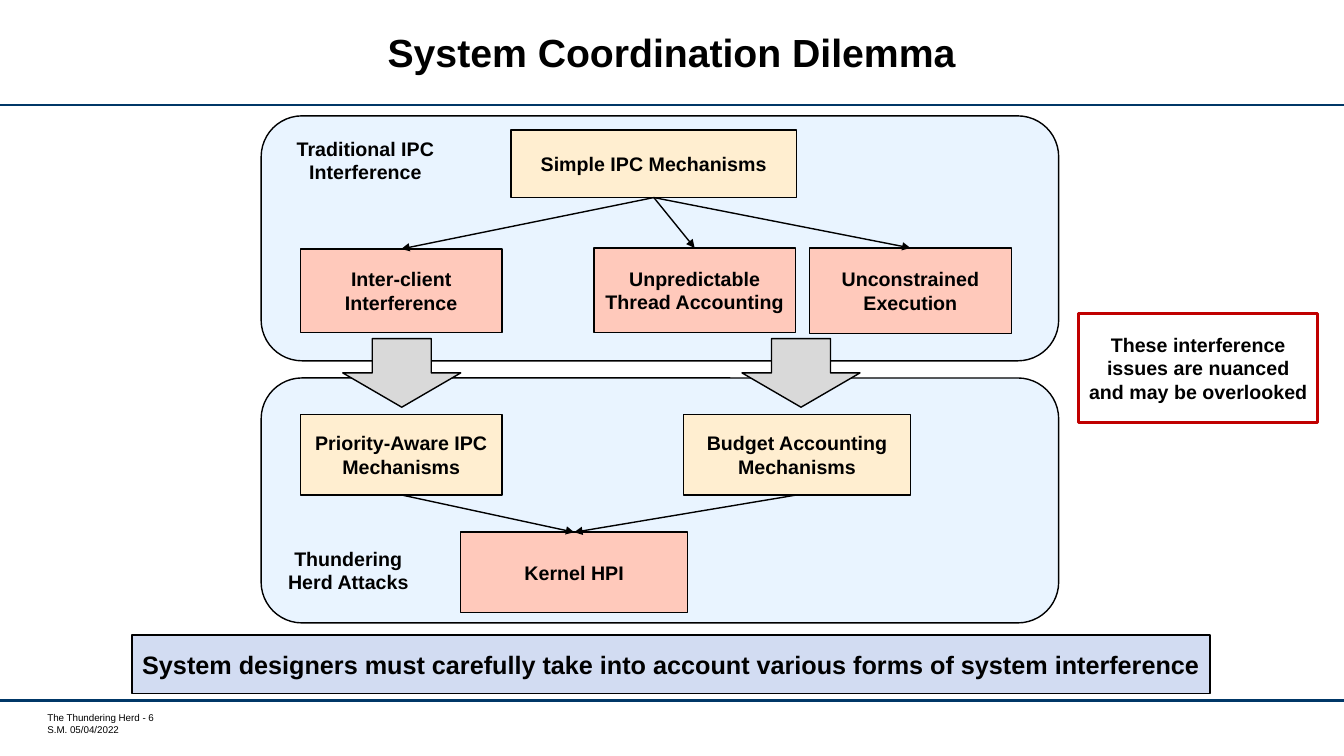
from dataclasses import dataclass

from lxml.etree import SubElement
from pptx import Presentation
from pptx.dml.color import RGBColor
from pptx.enum.shapes import MSO_CONNECTOR, MSO_SHAPE as SHAPE
from pptx.enum.text import MSO_ANCHOR as ANCHOR, PP_ALIGN as ALIGN
from pptx.oxml.ns import qn
from pptx.util import Inches, Pt


@dataclass(frozen=True)
class Theme:
    font: str = "Arial"
    black: str = "000000"
    white: str = "FFFFFF"
    rule: str = "003767"
    panel: str = "AED9FF"
    mechanism: str = "FFEED0"
    problem: str = "FFC9BB"
    arrow: str = "D9D9D9"
    banner: str = "D2DCF2"
    warning: str = "C00000"
    title_size: int = 28
    banner_size: int = 18
    body_size: int = 14
    footer_size: int = 7


theme = Theme()

presentation = Presentation()
presentation.slide_width, presentation.slide_height = Inches(13.33), Inches(7.5)
slide = presentation.slides.add_slide(presentation.slide_layouts[6])


def add_block(kind, place, fill=None, line=theme.black, width=1, lines=(),
              size=theme.body_size, bold=True, align=ALIGN.CENTER,
              anchor=ANCHOR.MIDDLE, inset=0.09, spacing=None):
    """Add a preset shape, or a text box when kind is None."""
    place = [Inches(value) for value in place]
    if kind is None:
        shape = slide.shapes.add_textbox(*place)
    else:
        shape = slide.shapes.add_shape(kind, *place)
        shape.shadow.inherit = False
        shape.fill.solid()
        shape.fill.fore_color.rgb = RGBColor.from_string(fill)
        shape.line.color.rgb = RGBColor.from_string(line)
        shape.line.width = Pt(width)
    frame = shape.text_frame
    frame_format = {"word_wrap": True, "vertical_anchor": anchor,
                    "margin_left": Inches(inset), "margin_right": Inches(inset),
                    "margin_top": Inches(inset / 2), "margin_bottom": Inches(inset / 2)}
    for name, value in frame_format.items():
        setattr(frame, name, value)
    for index, text in enumerate(lines):
        paragraph = frame.add_paragraph() if index else frame.paragraphs[0]
        paragraph.alignment = align
        paragraph.line_spacing = spacing
        run = paragraph.add_run()
        run.text = text
        for name, value in {"name": theme.font, "size": Pt(size), "bold": bold}.items():
            setattr(run.font, name, value)
        run.font.color.rgb = RGBColor.from_string(theme.black)
    return shape


def add_line(start, end, color=theme.black, width=1.0):
    """Add a straight connector without a shadow."""
    points = [Inches(value) for value in (*start, *end)]
    connector = slide.shapes.add_connector(MSO_CONNECTOR.STRAIGHT, *points)
    connector.line.color.rgb = RGBColor.from_string(color)
    connector.line.width = Pt(width)
    SubElement(connector._element.spPr, qn("a:effectLst"))
    return connector


# Header and footer
for rule_top in (1.04, 6.95):
    add_line((0, rule_top), (13.33, rule_top), theme.rule, 1.75)
add_block(None, (0.47, 7.06, 2.03, 0.24),
          lines=("The Thundering Herd - 6", "S.M. 05/04/2022"),
          size=theme.footer_size, bold=False, align=ALIGN.LEFT,
          anchor=ANCHOR.TOP, inset=0)
add_block(None, (1.37, 0.11, 10.58, 0.89), lines=("System Coordination Dilemma",),
          size=theme.title_size, spacing=Pt(28))

# Translucent panels
for panel_top in (3.75, 1.15):
    panel = add_block(SHAPE.ROUNDED_RECTANGLE, (2.59, panel_top, 7.91, 2.43), theme.panel)
    panel_color = panel._element.spPr.find(qn("a:solidFill"))[0]
    SubElement(panel_color, qn("a:alpha"), val="27000")

# Boxes of the diagram
boxes = {}
for text, place, fill in (
    ("Simple IPC Mechanisms", (5.07, 1.29, 2.83, 0.67), theme.mechanism),
    ("Inter-client Interference", (2.98, 2.47, 2, 0.83), theme.problem),
    ("Unpredictable Thread Accounting", (5.89, 2.46, 2, 0.84), theme.problem),
    ("Unconstrained Execution", (8.03, 2.46, 2, 0.85), theme.problem),
    ("Priority-Aware IPC Mechanisms", (2.98, 4.11, 2, 0.8), theme.mechanism),
    ("Budget Accounting Mechanisms", (6.78, 4.11, 2.25, 0.8), theme.mechanism),
    ("Kernel HPI", (4.57, 5.28, 2.25, 0.8), theme.problem),
):
    boxes[text] = add_block(SHAPE.RECTANGLE, place, fill, lines=(text,))

# Arrows from the bottom of one box to the top of the next
for source, target in (
    ("Simple IPC Mechanisms", "Inter-client Interference"),
    ("Simple IPC Mechanisms", "Unpredictable Thread Accounting"),
    ("Simple IPC Mechanisms", "Unconstrained Execution"),
    ("Budget Accounting Mechanisms", "Kernel HPI"),
    ("Priority-Aware IPC Mechanisms", "Kernel HPI"),
):
    link = add_line((0, 0), (1, 1))
    link.begin_connect(boxes[source], 2)
    link.end_connect(boxes[target], 0)
    SubElement(link.line._get_or_add_ln(), qn("a:tailEnd"), type="triangle")

# Block arrows between the panels
for arrow_left in (7.36, 3.4):
    add_block(SHAPE.DOWN_ARROW, (arrow_left, 3.36, 1.17, 0.68), theme.arrow)

# Panel labels
for place, lines in (
    ((2.81, 1.31, 1.63, 0.57), ("Traditional IPC", "Interference")),
    ((2.54, 5.38, 1.83, 0.57), ("Thundering", "Herd Attacks")),
):
    add_block(None, place, lines=lines, anchor=ANCHOR.TOP)

# Side note and closing banner
add_block(SHAPE.RECTANGLE, (10.7, 3.11, 2.37, 1.08), theme.white, theme.warning, 2,
          ("These interference issues are nuanced and may be overlooked",))
add_block(SHAPE.RECTANGLE, (1.31, 6.3, 10.69, 0.58), theme.banner,
          lines=("System designers must carefully take into account "
                 "various forms of system interference",),
          size=theme.banner_size)

presentation.save("out.pptx")
